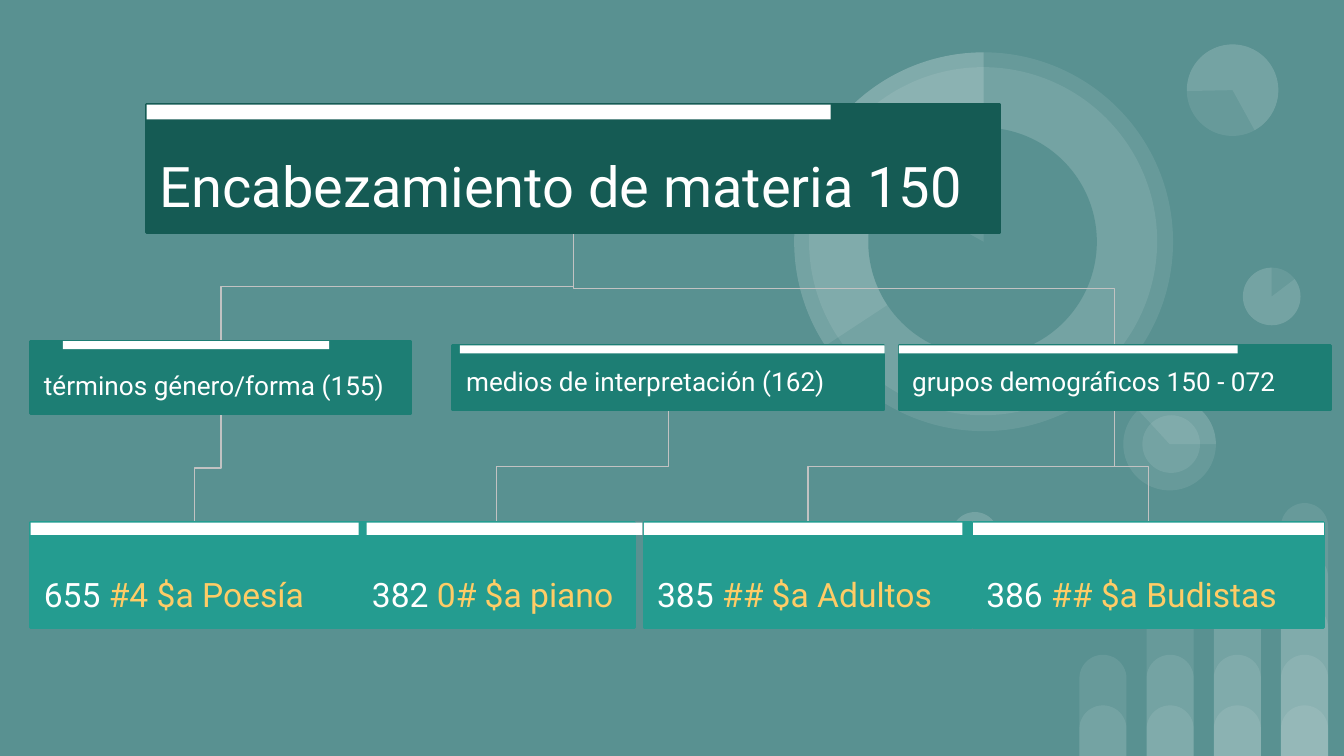
from collections import namedtuple

from lxml import etree
from pptx import Presentation
from pptx.dml.color import RGBColor
from pptx.enum.shapes import MSO_CONNECTOR as Connector, MSO_SHAPE as Shape
from pptx.enum.text import MSO_ANCHOR as Anchor, MSO_AUTO_SIZE as AutoSize, PP_ALIGN as Align
from pptx.oxml.ns import qn
from pptx.util import Cm, Pt

Box = namedtuple("Box", "left top width height")

FONT = "Roboto"
BACKGROUND, WHITE, YELLOW, GREY = "599191", "FFFFFF", "FFCC66", "C2C2C2"
ROOT_FILL, BRANCH_FILL, LEAF_FILL = "155B54", "1D7E74", "249C90"
VEIL = 9  # opacity of the background decoration, in percent


def color(hex_string):
    return RGBColor.from_string(hex_string)


def paint(shape, fill, line=None, opacity=None):
    shape.fill.solid()
    shape.fill.fore_color.rgb = color(fill)
    if opacity is not None:
        rgb = shape._element.spPr.find(qn("a:solidFill"))[0]
        etree.SubElement(rgb, qn("a:alpha"), val=str(opacity * 1000))
    if line:
        shape.line.color.rgb = color(line)
        shape.line.width = Pt(1.5)
    else:
        shape.line.fill.background()


def add_shape(slide, kind, box, fill, line=None, opacity=None, adjustments=()):
    shape = slide.shapes.add_shape(kind, *map(Cm, box))
    shape.shadow.inherit = False
    for index, value in enumerate(adjustments):
        shape.adjustments[index] = value
    paint(shape, fill, line, opacity)
    return shape


def add_text(paragraph, text, size, fill=WHITE):
    run = paragraph.add_run()
    run.text = text
    run.font.name = FONT
    run.font.size = Pt(size)
    run.font.bold = False
    run.font.color.rgb = color(fill)


def add_columns(slide, box):
    """Four columns of stacked round-topped bars, each one step taller."""
    step, pitch, width = box.height / 5, 1.27, 0.89
    for column in range(4):
        for level in range(1, column + 3):
            bar = Box(box.left + column * pitch,
                      box.top + box.height - level * step, width, level * step)
            add_shape(slide, Shape.ROUND_2_SAME_RECTANGLE, bar, WHITE,
                      opacity=VEIL, adjustments=(0.5, 0))


def add_pies(slide, box):
    """Translucent discs and pies; offsets are from the corner of the box."""
    def disc(left, top, size, fill=WHITE, opacity=VEIL, angles=None):
        place = Box(box.left + left, box.top + top, size, size)
        kind = Shape.PIE if angles else Shape.OVAL
        # Angles are stored in 1/60000 degree, adjustments in 1/100000
        adjustments = [angle * 0.6 for angle in angles or ()]
        add_shape(slide, kind, place, fill, opacity=opacity, adjustments=adjustments)

    # Small pies: disc with a slice on top
    for left, top, size, angles in [
        (8.48, 4.22, 1.09, (322.95, 270)),
        (2.97, 8.84, 0.89, (159.15, 106.2)),
        (6.22, 6.68, 1.75, (227.41, 0)),
        (7.42, 0, 1.73, (178.85, 61.13)),
    ]:
        disc(left, top, size)
        disc(left, top, size, angles=angles)
    disc(6.58, 7.01, 1.09)

    # Large ring
    ring = (0, 0.15, 7.16)
    disc(*ring)
    disc(0.28, 0.43, 6.58)
    disc(*ring, angles=(146.69, 270))
    disc(1.4, 1.57, 4.32, fill=BACKGROUND, opacity=None)
    disc(*ring, angles=(209.24, 270))


def add_elbow(slide, parent, child):
    """Vertical elbow: a horizontal one turned a quarter about its centre."""
    start_x, start_y = parent.left + parent.width / 2, parent.top + parent.height
    end_x, end_y = child.left + child.width / 2, child.top
    middle_x, middle_y = (start_x + end_x) / 2, (start_y + end_y) / 2
    half_x, half_y = (end_x - start_x) / 2, (end_y - start_y) / 2
    connector = slide.shapes.add_connector(
        Connector.ELBOW, Cm(middle_x - half_y), Cm(middle_y + half_x),
        Cm(middle_x + half_y), Cm(middle_y - half_x))
    connector.line.color.rgb = color(GREY)
    connector.line.width = Pt(0.75)
    properties = connector._element.spPr
    properties.find(qn("a:xfrm")).set("rot", "5400000")
    etree.SubElement(properties, qn("a:effectLst"))


def add_card(slide, box, fill, size, label, code="", bar=(0, 1, 0.2), title=None):
    """Filled card with a white bar on its top edge; bar is offset, width, height."""
    if title is None:
        card = add_shape(slide, Shape.RECTANGLE, box, fill, line=fill)
    else:
        card = title
        card.left, card.top, card.width, card.height = map(Cm, box)
        paint(card, fill, line=fill)
        slide.shapes._spTree.append(card._element)  # in front of the connectors
    frame = card.text_frame
    frame.word_wrap = True
    frame.auto_size = AutoSize.NONE
    frame.vertical_anchor = Anchor.BOTTOM
    frame.margin_left = frame.margin_right = Cm(0.25)
    frame.margin_top = frame.margin_bottom = Cm(0.25)
    paragraph = frame.paragraphs[0]
    paragraph.alignment = Align.LEFT
    paragraph.line_spacing = 1.0
    paragraph.space_before = Pt(0)
    add_text(paragraph, label, size)
    if code:
        add_text(paragraph, code, size, fill=YELLOW)
    offset, width, height = bar
    add_shape(slide, Shape.RECTANGLE,
              Box(box.left + offset, box.top, width, height), WHITE)


def add_tree(slide, box):
    """Heading, its branches and their leaves; rows hang from the top of the box."""
    branch_top, leaf_top = box.top + 4.55, box.top + 7.9
    root = Box(box.left + 2.19, box.top, 16.13, 2.41)
    genre = Box(box.left, branch_top - 0.08, 7.19, 1.37)
    medium = Box(box.left + 7.98, branch_top, 8.15, 1.22)
    group = Box(box.left + 16.41, branch_top, 8.15, 1.22)
    poetry, piano, adults, buddhists = [
        Box(box.left + left, leaf_top, width, 1.98)
        for left, width in [(0, 6.2), (6.2, 5.21), (11.59, 6.2), (17.81, 6.63)]]

    # Connectors
    for parent, child in [(root, group), (root, genre), (medium, piano),
                          (genre, poetry), (group, buddhists), (group, adults)]:
        add_elbow(slide, parent, child)

    # Heading
    add_card(slide, root, ROOT_FILL, 30, "Encabezamiento de materia 150",
             bar=(0, 12.93, 0.28), title=slide.shapes.title)

    # Branches
    for place, label, offset, width in [
        (genre, "términos género/forma (155)", 0.61, 5.03),
        (medium, "medios de interpretación (162)", 0.13, 8.03),
        (group, "grupos demográficos 150 - 072", 0, 6.4),
    ]:
        add_card(slide, place, BRANCH_FILL, 14, label, bar=(offset, width, 0.15))

    # Leaves
    for place, label, code, offset, width in [
        (buddhists, "386", " ## $a Budistas", 0, 6.63),
        (piano, "382", " 0# $a piano", 0.15, 5.21),
        (poetry, "655", " #4 $a Poesía", 0, 6.2),
        (adults, "385", " ## $a Adultos", 0, 6.02),
    ]:
        add_card(slide, place, LEAF_FILL, 18, label, code, bar=(offset, width, 0.23))


def main():
    presentation = Presentation()
    presentation.slide_width, presentation.slide_height = Cm(25.4), Cm(14.29)
    slide = presentation.slides.add_slide(presentation.slide_layouts[5])
    slide.background.fill.solid()
    slide.background.fill.fore_color.rgb = color(BACKGROUND)
    add_columns(slide, Box(20.4, 9.51, 4.7, 4.78))
    add_pies(slide, Box(15.01, 0.84, 9.57, 9.73))
    add_tree(slide, Box(0.58, 1.98, 24.56, 9.88))
    presentation.save("out.pptx")


if __name__ == "__main__":
    main()
